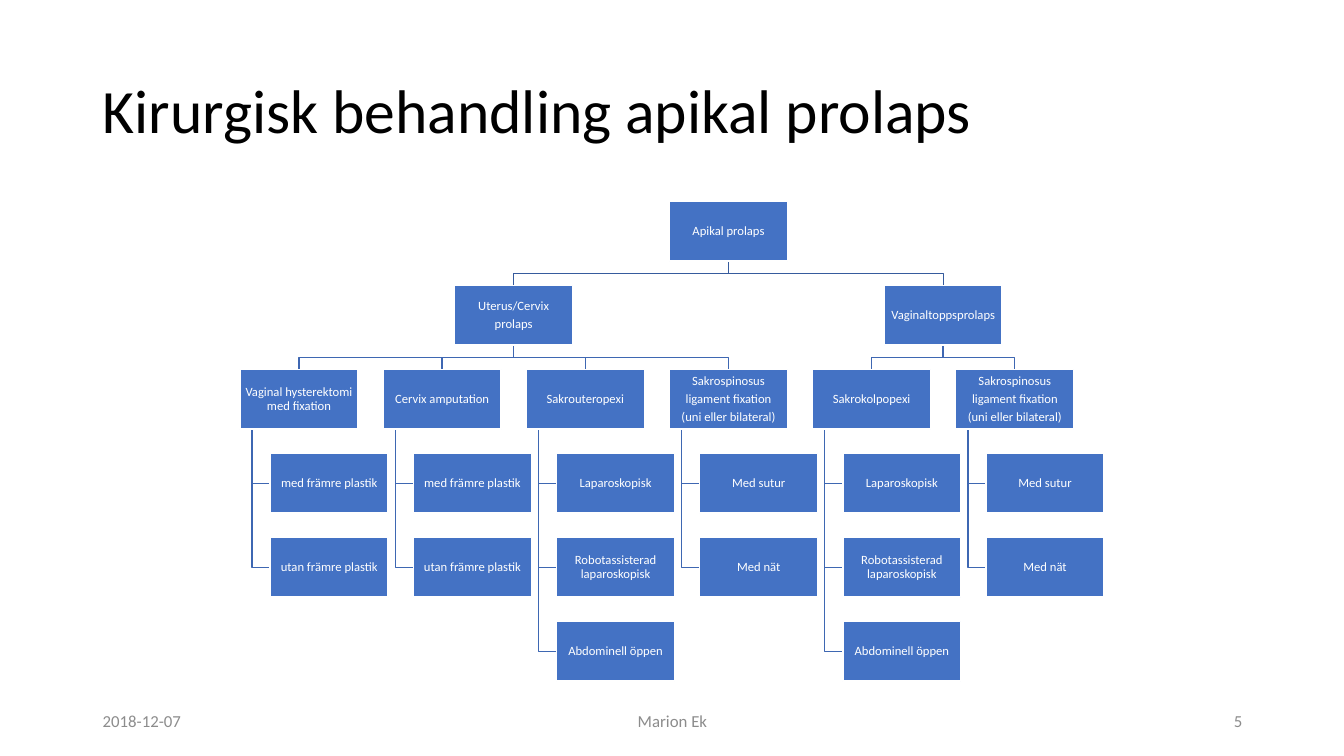
from pptx import Presentation
from pptx.dml.color import RGBColor
from pptx.enum.shapes import MSO_SHAPE
from pptx.enum.text import MSO_ANCHOR, PP_ALIGN
from pptx.util import Inches, Pt

RECT = MSO_SHAPE.RECTANGLE
MIDDLE = MSO_ANCHOR.MIDDLE
LEFT, CENTER, RIGHT = PP_ALIGN.LEFT, PP_ALIGN.CENTER, PP_ALIGN.RIGHT

TITLE = "Kirurgisk behandling apikal prolaps"
ROOT = "Apikal prolaps"
PLASTIC = ["med främre plastik", "utan främre plastik"]
ACCESS = ["Laparoskopisk", "Robotassisterad laparoskopisk", "Abdominell öppen"]
MESH = ["Med sutur", "Med nät"]
SPINOUS = "Sakrospinosus\nligament fixation\n(uni eller bilateral)"
BRANCHES = [
    ("Uterus/Cervix\nprolaps", [
        ("Vaginal hysterektomi med fixation", PLASTIC),
        ("Cervix amputation", PLASTIC),
        ("Sakrouteropexi", ACCESS),
        (SPINOUS, MESH),
    ]),
    ("Vaginaltoppsprolaps", [
        ("Sakrokolpopexi", ACCESS),
        (SPINOUS, MESH),
    ]),
]
FOOTER = [
    ("2018-12-07", 0.92, 3, LEFT),
    ("Marion Ek", 4.42, 4.5, CENTER),
    ("5", 9.42, 3, RIGHT),
]

FONT = "Calibri"
BLUE, WHITE, BLACK, GREY = "4472C4", "FFFFFF", "000000", "8C8C8C"
TOP_LINE, LINE = "365B9D", "3E67B2"
X0, Y0 = 2.38, 2.0            # first column and row
COL, ROW = 1.42, 2.5 / 3      # grid pitch
WIDE, HIGH = 1.17, 0.59       # box size
INDENT, STEM = 0.3, 0.12      # variant shift, stem offset

prs = Presentation()
prs.slide_width, prs.slide_height = Inches(13.33), Inches(7.5)
slide = prs.slides.add_slide(prs.slide_layouts[5])
shapes = slide.shapes


def color(code):
    return RGBColor.from_string(code)


def write(par, text, size, code, align):
    par.alignment = align
    run = par.add_run()
    run.text = text
    run.font.name, run.font.size = FONT, Pt(size)
    run.font.color.rgb = color(code)


def spot(col, row):
    """Left and top, in inches, of a grid cell."""
    return X0 + col * COL, Y0 + row * ROW


def draw_box(text, col, row, shift=0):
    left, top = spot(col, row)
    box = shapes.add_shape(RECT, Inches(left + shift), Inches(top),
                           Inches(WIDE), Inches(HIGH))
    box.shadow.inherit = False
    box.fill.solid()
    box.fill.fore_color.rgb = color(BLUE)
    box.line.color.rgb = color(WHITE)
    box.line.width = Pt(1)
    frame = box.text_frame
    frame.word_wrap = True
    frame.vertical_anchor = MIDDLE
    frame.margin_left = frame.margin_right = Inches(0.01)
    frame.margin_top = frame.margin_bottom = Inches(0.01)
    for i, part in enumerate(text.split("\n")):
        par = frame.add_paragraph() if i else frame.paragraphs[0]
        par.line_spacing, par.space_after = 0.9, Pt(3.15)
        write(par, part, 9, WHITE, CENTER)


def draw_path(points, code):
    start, *rest = [(Inches(x), Inches(y)) for x, y in points]
    pen = shapes.build_freeform(*start)
    pen.add_line_segments(rest, close=False)
    path = pen.convert_to_shape()
    path.shadow.inherit = False
    path.fill.background()
    path.line.color.rgb = color(code)
    path.line.width = Pt(1)


def draw_fork(col, row, child, code):
    """Line from a box down to a child box in the next row."""
    left, top = spot(col, row)
    end, low = spot(child, row + 1)
    x1, x2 = left + WIDE / 2, end + WIDE / 2
    base = top + HIGH
    mid = (base + low) / 2
    draw_path([(x1, base), (x1, mid), (x2, mid), (x2, low)], code)


def draw_stem(col, row):
    """Line from a method down its left side to a variant."""
    left, top = spot(col, 2)
    x, y = left + STEM, spot(col, row)[1] + HIGH / 2
    draw_path([(x, top + HIGH), (x, y), (left + INDENT, y)], LINE)


title = shapes.title
title.left, title.top = Inches(0.92), Inches(0.4)
title.width, title.height = Inches(11.5), Inches(1.45)
title.text_frame.vertical_anchor = MIDDLE
head = title.text_frame.paragraphs[0]
head.line_spacing = 0.9
write(head, TITLE, 44, BLACK, LEFT)

boxes, forks, stems = [], [], []
mids, col = [], 0
for name, methods in BRANCHES:
    mid = col + (len(methods) - 1) / 2
    mids.append(mid)
    boxes.append((name, mid, 1))
    for method, variants in methods:
        boxes.append((method, col, 2))
        forks.append((mid, 1, col, LINE))
        for row, variant in enumerate(variants, 3):
            boxes.append((variant, col, row, INDENT))
            stems.append((col, row))
        col += 1
top = sum(mids) / len(mids)
boxes.insert(0, (ROOT, top, 0))
forks += [(top, 0, mid, TOP_LINE) for mid in mids]

for stem in stems:
    draw_stem(*stem)
for fork in forks:
    draw_fork(*fork)
for box in boxes:
    draw_box(*box)

for text, left, width, align in FOOTER:
    note = shapes.add_textbox(Inches(left), Inches(6.95),
                              Inches(width), Inches(0.4)).text_frame
    note.word_wrap = True
    note.vertical_anchor = MIDDLE
    write(note.paragraphs[0], text, 12, GREY, align)

prs.save("out.pptx")
